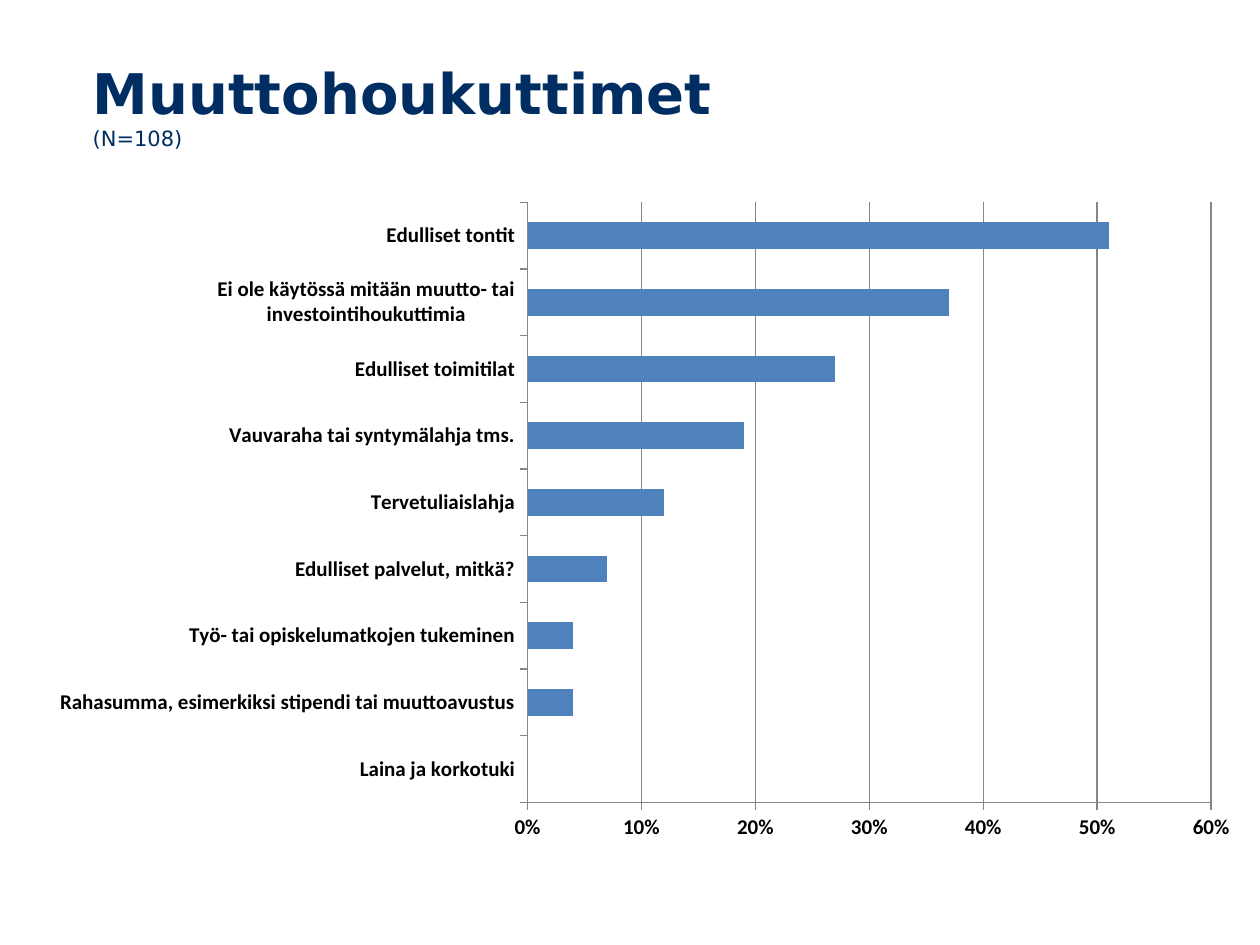
from dataclasses import dataclass

from lxml.etree import SubElement
from pptx import Presentation
from pptx.chart.data import CategoryChartData
from pptx.dml.color import RGBColor
from pptx.enum.chart import XL_CHART_TYPE, XL_TICK_MARK
from pptx.enum.text import MSO_ANCHOR
from pptx.oxml.ns import qn
from pptx.util import Cm, Pt


@dataclass(frozen=True)
class Theme:
    navy: RGBColor = RGBColor(0x00, 0x2D, 0x62)
    bar: RGBColor = RGBColor(0x4F, 0x81, 0xBD)
    text: RGBColor = RGBColor(0x00, 0x00, 0x00)
    line: RGBColor = RGBColor(0x86, 0x86, 0x86)
    title_font: str = "DejaVu Sans"
    chart_font: str = "Calibri"
    title_size: Pt = Pt(32)
    small_size: Pt = Pt(12)


THEME = Theme()

INCENTIVES = [
    ("Laina ja korkotuki", 0),
    ("Rahasumma, esimerkiksi stipendi tai muuttoavustus", 0.04),
    ("Työ- tai opiskelumatkojen tukeminen", 0.04),
    ("Edulliset palvelut, mitkä?", 0.07),
    ("Tervetuliaislahja", 0.12),
    ("Vauvaraha tai syntymälahja tms.", 0.19),
    ("Edulliset toimitilat", 0.27),
    ("Ei ole käytössä mitään muutto- tai investointihoukuttimia", 0.37),
    ("Edulliset tontit", 0.51),
]


def set_font(font, name, size, color, bold):
    font.name = name
    font.size = size
    font.bold = bold
    font.color.rgb = color


def add_title(s, title, sample):
    box = s.shapes.add_textbox(Cm(1.87), Cm(-1.07), Cm(21.67), Cm(4.19))
    tf = box.text_frame
    tf.word_wrap = True
    tf.vertical_anchor = MSO_ANCHOR.MIDDLE
    tf.margin_left = tf.margin_right = tf.margin_bottom = 0
    tf.margin_top = Cm(2.18)
    p = tf.paragraphs[0]
    p.text = f"{title}\v{sample}"  # line break inside one paragraph
    heading, note = p.runs
    set_font(heading.font, THEME.title_font, THEME.title_size, THEME.navy, True)
    set_font(note.font, THEME.title_font, THEME.small_size, THEME.navy, False)


def set_plot_layout(chart, **fractions):
    """Fix the inner plot area as fractions of the chart frame."""
    plot_area = chart.plots[0]._element.getparent()
    for old in plot_area.findall(qn("c:layout")):
        plot_area.remove(old)
    layout = SubElement(plot_area, qn("c:layout"))
    plot_area.insert(0, layout)
    manual = SubElement(layout, qn("c:manualLayout"))
    settings = {"layoutTarget": "inner", "xMode": "edge", "yMode": "edge", **fractions}
    for tag, value in settings.items():
        SubElement(manual, qn(f"c:{tag}")).set("val", str(value))


def style_axis(axis):
    axis.major_tick_mark = XL_TICK_MARK.OUTSIDE
    axis.minor_tick_mark = XL_TICK_MARK.NONE
    axis.format.line.color.rgb = THEME.line


def add_bar_chart(s, rows):
    data = CategoryChartData(number_format="0%")
    data.categories = [label for label, _ in rows]
    data.add_series("Series 1", [share for _, share in rows])
    chart = s.shapes.add_chart(
        XL_CHART_TYPE.BAR_CLUSTERED, Cm(0.79), Cm(3.81), Cm(24.61), Cm(13.44), data
    ).chart
    chart.has_legend = False
    chart.has_title = False
    set_font(chart.font, THEME.chart_font, THEME.small_size, THEME.text, True)

    # Bars
    plot = chart.plots[0]
    plot.gap_width = 150
    plot.vary_by_categories = False
    fill = plot.series[0].format.fill
    fill.solid()
    fill.fore_color.rgb = THEME.bar

    # Axes and gridlines
    style_axis(chart.category_axis)
    axis = chart.value_axis
    style_axis(axis)
    axis.minimum_scale, axis.maximum_scale, axis.major_unit = 0, 0.6, 0.1
    axis.has_major_gridlines = True
    axis.major_gridlines.format.line.color.rgb = THEME.line
    axis.tick_labels.number_format = "0%"
    axis.tick_labels.number_format_is_linked = False
    set_plot_layout(chart, x=0.4, y=0.02, w=0.56, h=0.9)


def main():
    prs = Presentation()
    prs.slide_width, prs.slide_height = Cm(25.4), Cm(19.05)
    s = prs.slides.add_slide(prs.slide_layouts[6])
    add_title(s, "Muuttohoukuttimet", "(N=108)")
    add_bar_chart(s, INCENTIVES)
    prs.save("out.pptx")


if __name__ == "__main__":
    main()
